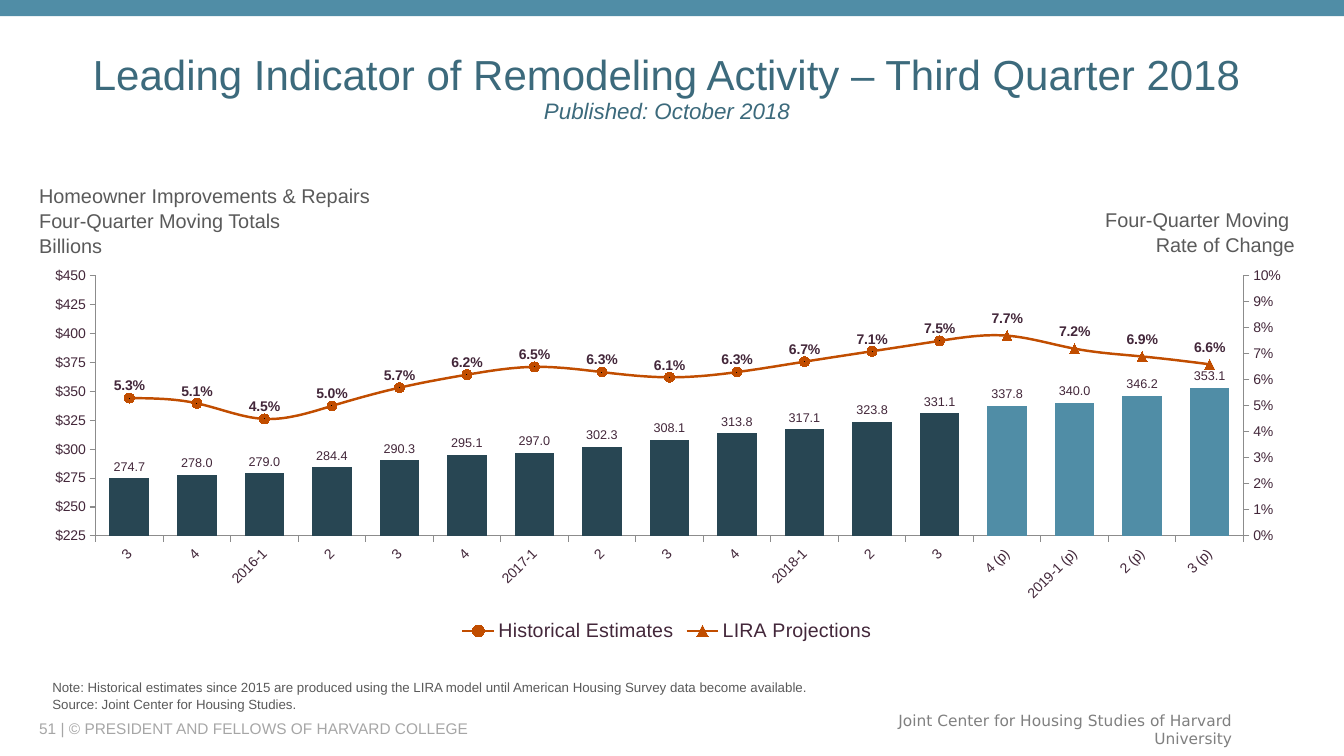
from dataclasses import dataclass

from lxml.etree import SubElement
from pptx import Presentation
from pptx.chart.data import CategoryChartData
from pptx.dml.color import RGBColor
from pptx.enum.chart import (XL_CHART_TYPE, XL_LABEL_POSITION, XL_LEGEND_POSITION,
                             XL_MARKER_STYLE, XL_TICK_MARK)
from pptx.enum.shapes import MSO_SHAPE
from pptx.enum.text import MSO_ANCHOR, PP_ALIGN
from pptx.oxml import parse_xml
from pptx.oxml.ns import nsdecls, qn
from pptx.util import Inches, Pt


@dataclass(frozen=True)
class Theme:
    font: str = "Arial"
    footer_font: str = "DejaVu Sans"
    title: str = "3C6A7C"
    body: str = "5A5A5A"
    footer: str = "A6A6A6"
    center: str = "808080"
    chart_text: str = "43273A"
    axis: str = "8C8C8C"
    history: str = "284653"
    projection: str = "508DA6"
    rate: str = "C14D00"
    title_size: float = 30
    subtitle_size: float = 16
    heading_size: float = 14.2
    legend_size: float = 14
    footer_size: float = 11
    axis_size: float = 10
    note_size: float = 9.5
    label_size: float = 9


THEME = Theme()
QUARTERS = ["3", "4", "2016-1", "2", "3", "4", "2017-1", "2", "3", "4", "2018-1",
            "2", "3", "4 (p)", "2019-1 (p)", "2 (p)", "3 (p)"]
TOTALS = [274.7, 278, 279, 284.4, 290.3, 295.1, 297, 302.3, 308.1, 313.8, 317.1,
          323.8, 331.1, 337.8, 340, 346.2, 353.1]
RATES = [0.053, 0.051, 0.045, 0.05, 0.057, 0.062, 0.065, 0.063, 0.061, 0.063, 0.067,
         0.071, 0.075, 0.077, 0.072, 0.069, 0.066]
FIRST_PROJECTION = 13

RIGHT_AXES = f"""<c:plotArea {nsdecls('c')}>
<c:valAx><c:axId val="3002"/><c:scaling><c:orientation val="minMax"/><c:max val="0.1"/>
<c:min val="0"/></c:scaling><c:delete val="0"/><c:axPos val="r"/>
<c:numFmt formatCode="0%" sourceLinked="0"/><c:majorTickMark val="out"/>
<c:minorTickMark val="none"/><c:tickLblPos val="nextTo"/><c:crossAx val="3001"/>
<c:crosses val="max"/><c:crossBetween val="between"/><c:majorUnit val="0.01"/></c:valAx>
<c:catAx><c:axId val="3001"/><c:scaling><c:orientation val="minMax"/></c:scaling>
<c:delete val="1"/><c:axPos val="b"/><c:crossAx val="3002"/><c:crosses val="autoZero"/>
</c:catAx></c:plotArea>"""

PLOT_LAYOUT = f"""<c:layout {nsdecls('c')}><c:manualLayout><c:layoutTarget val="inner"/>
<c:xMode val="edge"/><c:yMode val="edge"/><c:x val="0.052"/><c:y val="0.041"/>
<c:w val="0.9"/><c:h val="0.674"/></c:manualLayout></c:layout>"""


def rgb(value):
    return RGBColor.from_string(value)


def style_font(font, size, color, name=THEME.font, bold=False):
    font.name, font.size, font.bold = name, Pt(size), bold
    font.color.rgb = rgb(color)


def paint(fill, color):
    fill.solid()
    fill.fore_color.rgb = rgb(color)


def add_text(s, box, lines, size, color, align=PP_ALIGN.LEFT, anchor=MSO_ANCHOR.TOP,
             name=THEME.font, spacing=1.05):
    tf = s.shapes.add_textbox(*map(Inches, box)).text_frame
    tf.word_wrap = True
    tf.vertical_anchor = anchor
    for i, line in enumerate(lines):
        p = tf.add_paragraph() if i else tf.paragraphs[0]
        p.text = line
        p.alignment = align
        p.line_spacing = spacing
        style_font(p.font, size, color, name)


def add_band(s):
    sp = s.shapes.add_shape(MSO_SHAPE.RECTANGLE, 0, 0, Inches(13.33), Inches(0.16))
    sp.shadow.inherit = False
    paint(sp.fill, THEME.projection)
    sp.line.fill.background()


def set_title(s, text, subtitle):
    sp = s.shapes.title
    sp.left, sp.top, sp.width, sp.height = map(Inches, (0.29, 0.4, 12.65, 0.97))
    tf = sp.text_frame
    tf.vertical_anchor = MSO_ANCHOR.MIDDLE
    p = tf.paragraphs[0]
    p.alignment = PP_ALIGN.CENTER
    p.line_spacing = 0.9
    r = p.add_run()
    r.text = text
    style_font(r.font, THEME.title_size, THEME.title)
    p.add_line_break()
    r = p.add_run()
    r.text = subtitle
    style_font(r.font, THEME.subtitle_size, THEME.title)
    r.font.italic = True


def move_rates_to_right_axis(chart):
    plot_area = chart.plots[0]._element.getparent()
    bars = plot_area.find(qn("c:barChart"))
    lines = parse_xml(f'<c:lineChart {nsdecls("c")}><c:grouping val="standard"/>'
                      '<c:varyColors val="0"/></c:lineChart>')
    for ser in bars.findall(qn("c:ser"))[1:]:
        for invert in ser.findall(qn("c:invertIfNegative")):
            ser.remove(invert)
        lines.append(ser)
    for tag, value in (("marker", "1"), ("axId", "3001"), ("axId", "3002")):
        SubElement(lines, qn(f"c:{tag}")).set("val", value)
    bars.addnext(lines)
    right_axis, hidden_axis = list(parse_xml(RIGHT_AXES))
    plot_area.find(qn("c:valAx")).addnext(right_axis)
    right_axis.addnext(hidden_axis)
    for layout in plot_area.findall(qn("c:layout")):
        plot_area.remove(layout)
    plot_area.insert(0, parse_xml(PLOT_LAYOUT))
    return right_axis


def style_axis(axis):
    axis.major_tick_mark = XL_TICK_MARK.OUTSIDE
    axis.format.line.color.rgb = rgb(THEME.axis)
    axis.format.line.width = Pt(0.75)
    style_font(axis.tick_labels.font, THEME.axis_size, THEME.chart_text)


def show_values(series, number_format, position, size, bold=False):
    labels = series.data_labels
    labels.show_value = True
    labels.number_format = number_format
    labels.number_format_is_linked = False
    labels.position = position
    style_font(labels.font, size, THEME.chart_text, bold=bold)


def style_rate(series, marker, width, unmarked):
    series.smooth = True
    series.format.line.color.rgb = rgb(THEME.rate)
    series.format.line.width = Pt(width)
    series.marker.style = marker
    series.marker.size = 7
    paint(series.marker.format.fill, THEME.rate)
    series.marker.format.line.color.rgb = rgb(THEME.rate)
    for i in unmarked:
        point = series.points[i]
        point.marker.style = XL_MARKER_STYLE.NONE
        point.format.line.color.rgb = rgb(THEME.rate)
        point.format.line.width = Pt(width)


def add_legend(chart):
    chart.has_legend = True
    legend = chart.legend
    legend.position = XL_LEGEND_POSITION.BOTTOM
    legend.include_in_layout = False
    style_font(legend.font, THEME.legend_size, THEME.chart_text)
    entry = parse_xml(f'<c:legendEntry {nsdecls("c")}><c:idx val="0"/>'
                      '<c:delete val="1"/></c:legendEntry>')
    legend._element.get_or_add_legendPos().addnext(entry)


def add_remodeling_chart(s):
    data = CategoryChartData()
    data.categories = QUARTERS
    data.add_series("Series 1", TOTALS)
    data.add_series("Historical Estimates", RATES, "0.0%")
    data.add_series("LIRA Projections", RATES, "0.0%")
    chart = s.shapes.add_chart(XL_CHART_TYPE.COLUMN_CLUSTERED,
                               *map(Inches, (0.29, 2.58, 12.65, 3.83)), data).chart
    chart.has_title = False
    style_font(chart.font, 18, THEME.body)

    totals_axis, quarter_axis = chart.value_axis, chart.category_axis
    totals_axis.has_major_gridlines = False
    totals_axis.minimum_scale, totals_axis.maximum_scale = 225, 450
    totals_axis.major_unit = 25
    totals_axis.tick_labels.number_format = '"$"#,##0'
    totals_axis.tick_labels.number_format_is_linked = False
    right_axis = move_rates_to_right_axis(chart)
    for axis in (quarter_axis, totals_axis, type(totals_axis)(right_axis)):
        style_axis(axis)
    quarter_axis._element.find(qn("c:txPr")).find(qn("a:bodyPr")).set("rot", "-2700000")

    bars, lines = chart.plots
    bars.gap_width = 70
    bars.vary_by_categories = False
    totals = bars.series[0]
    paint(totals.format.fill, THEME.history)
    projected = range(FIRST_PROJECTION, len(QUARTERS))
    for i in projected:
        paint(totals.points[i].format.fill, THEME.projection)
    show_values(totals, "#,##0.0", XL_LABEL_POSITION.OUTSIDE_END, THEME.label_size)

    history, projection = lines.series
    style_rate(history, XL_MARKER_STYLE.CIRCLE, 1.75, projected)
    style_rate(projection, XL_MARKER_STYLE.TRIANGLE, 0.75, range(FIRST_PROJECTION))
    show_values(projection, "0.0%", XL_LABEL_POSITION.ABOVE, THEME.axis_size, bold=True)
    add_legend(chart)


def main():
    prs = Presentation()
    prs.slide_width, prs.slide_height = Inches(13.33), Inches(7.5)
    s = prs.slides.add_slide(prs.slide_layouts[5])
    add_band(s)
    set_title(s, "Leading Indicator of Remodeling Activity – Third Quarter 2018",
              "Published: October 2018")
    add_remodeling_chart(s)
    add_text(s, (0.29, 1.76, 4.94, 0.82),
             ["Homeowner Improvements & Repairs", "Four-Quarter Moving Totals", "Billions"],
             THEME.heading_size, THEME.body)
    add_text(s, (9.88, 2, 3.06, 0.58), ["Four-Quarter Moving ", "Rate of Change"],
             THEME.heading_size, THEME.body, PP_ALIGN.RIGHT)
    add_text(s, (0.42, 6.68, 11.39, 0.42),
             ["Note: Historical estimates since 2015 are produced using the LIRA model "
              "until American Housing Survey data become available.",
              "Source: Joint Center for Housing Studies."], THEME.note_size, THEME.body)
    add_text(s, (0.29, 7.13, 7.92, 0.2), ["51 | © PRESIDENT AND FELLOWS OF HARVARD COLLEGE"],
             THEME.footer_size, THEME.footer, anchor=MSO_ANCHOR.MIDDLE, spacing=1)
    add_text(s, (8.42, 7.09, 3.9, 0.29),
             ["Joint Center for Housing Studies of Harvard University"], THEME.footer_size,
             THEME.center, PP_ALIGN.RIGHT, MSO_ANCHOR.MIDDLE, THEME.footer_font, 1)
    prs.save("out.pptx")


if __name__ == "__main__":
    main()
